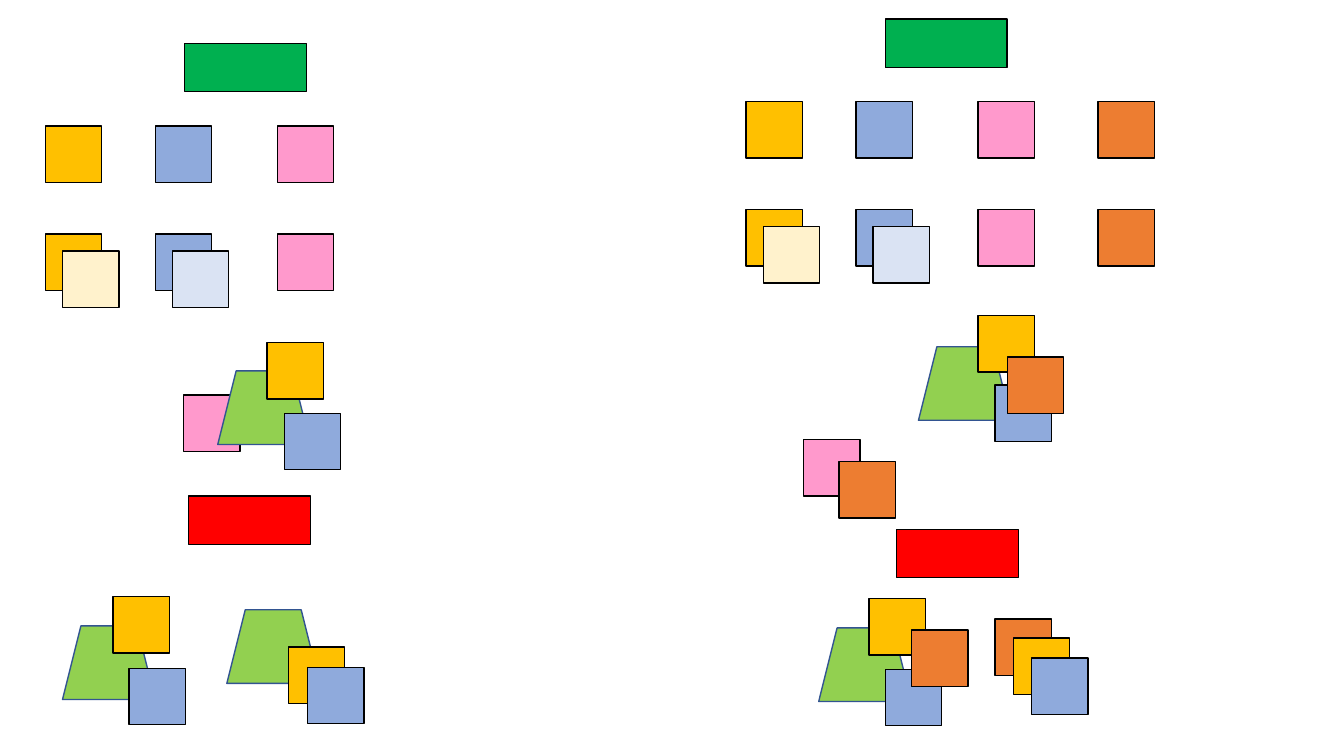
from pptx import Presentation
from pptx.dml.color import RGBColor
from pptx.enum.shapes import MSO_SHAPE
from pptx.util import Inches, Pt

RECT = MSO_SHAPE.RECTANGLE
TRAPEZOID = MSO_SHAPE.TRAPEZOID

COLORS = {
    "start": "00B050", "stop": "FF0000",
    "yellow": "FFC000", "blue": "8FAADC", "pink": "FF99CC", "orange": "ED7D31",
    "pale yellow": "FFF2CC", "pale blue": "DAE3F3",
    "base": "92D050", "outline": "000000", "base outline": "325491",
}
SQUARE = (0.56, 0.56)
SIZES = {"start": (1.21, 0.48), "stop": (1.21, 0.48), "base": (0.92, 0.73)}


def add_block(shapes, name, x, y):
    width, height = SIZES.get(name, SQUARE)
    is_base = name == "base"
    sp = shapes.add_shape(TRAPEZOID if is_base else RECT,
                          Inches(x), Inches(y), Inches(width), Inches(height))
    sp.shadow.inherit = False
    sp.fill.solid()
    sp.fill.fore_color.rgb = RGBColor.from_string(COLORS[name])
    outline = "base outline" if is_base else "outline"
    sp.line.color.rgb = RGBColor.from_string(COLORS[outline])
    sp.line.width = Pt(1)


prs = Presentation()
prs.slide_width, prs.slide_height = Inches(13.33), Inches(7.5)
s = prs.slides.add_slide(prs.slide_layouts[6])

# Two panels: start bar, two rows of squares, then the blocks below them
COLUMNS = {"yellow": 0, "blue": 1.09, "pink": 2.3, "orange": 3.49}
ROW_GAP = 1.07
PALE_SHIFT = 0.17
panels = [
    (0.45, 1.25, ["yellow", "blue", "pink"],
     [("stop", 1.87, 4.92), ("pink", 1.82, 3.92), ("base", 2.16, 3.68),
      ("yellow", 2.65, 3.4), ("blue", 2.82, 4.1)]),
    (7.4, 1.01, ["yellow", "blue", "pink", "orange"],
     [("stop", 8.89, 5.25), ("base", 9.11, 3.44), ("yellow", 9.7, 3.13),
      ("blue", 9.87, 3.82), ("pink", 7.97, 4.36)]),
]
for left, top, names, lower_blocks in panels:
    panel = s.shapes.add_group_shape().shapes
    add_block(panel, "start", left + 1.38, top - 0.82)
    for row in range(2):
        for name in names:
            add_block(panel, name, left + COLUMNS[name], top + row * ROW_GAP)
    for name in ("yellow", "blue"):
        add_block(panel, "pale " + name, left + COLUMNS[name] + PALE_SHIFT,
                  top + ROW_GAP + PALE_SHIFT)
    for name, x, y in lower_blocks:
        add_block(panel, name, x, y)

# Loose blocks, back to front
loose_blocks = [
    ("base", 2.25, 6.05), ("yellow", 2.86, 6.42), ("blue", 3.05, 6.62),
    ("base", 0.62, 6.21), ("yellow", 1.12, 5.92), ("blue", 1.28, 6.63),
    ("orange", 9.99, 3.54), ("orange", 8.32, 4.58),
    ("base", 8.12, 6.23), ("yellow", 8.62, 5.94), ("blue", 8.78, 6.64),
    ("orange", 9.87, 6.14), ("orange", 9.04, 6.25),
    ("yellow", 10.05, 6.33), ("blue", 10.23, 6.53),
]
for name, x, y in loose_blocks:
    add_block(s.shapes, name, x, y)

prs.save("out.pptx")
